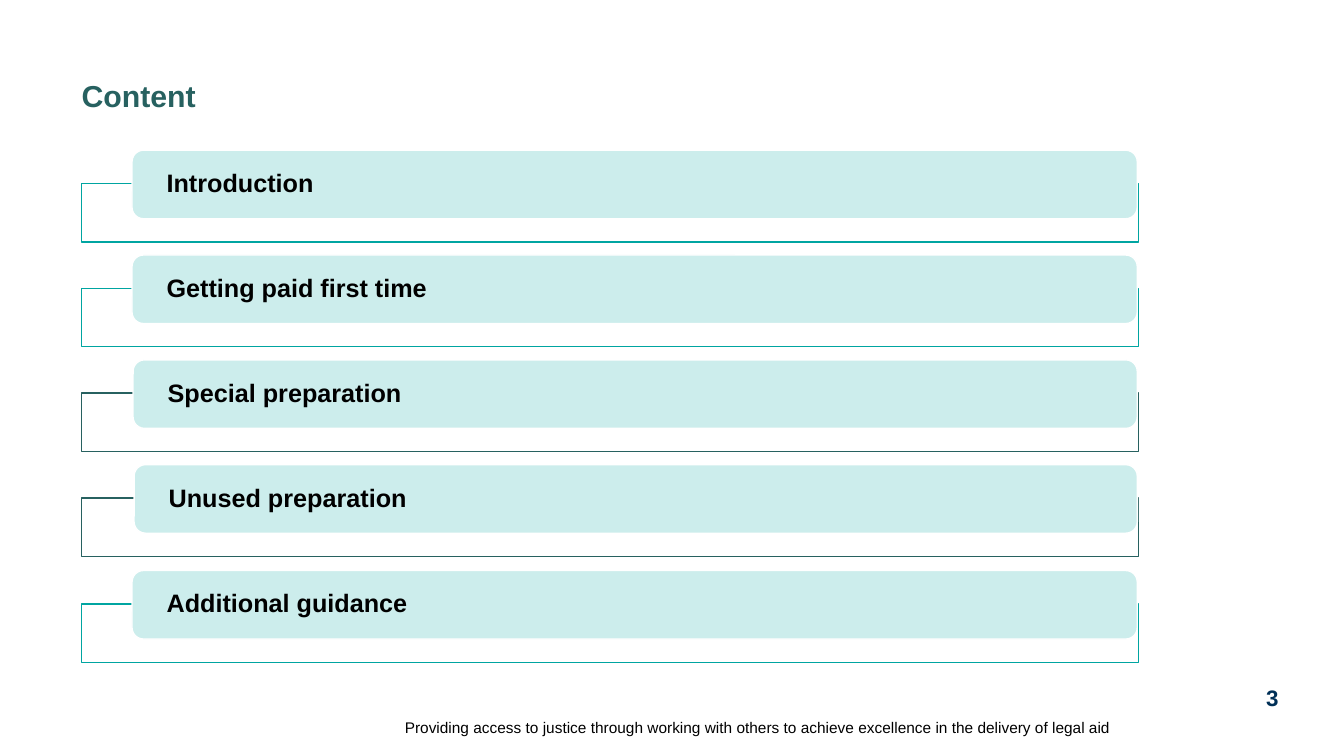
from lxml.etree import SubElement
from pptx import Presentation
from pptx.dml.color import RGBColor
from pptx.enum.shapes import MSO_SHAPE
from pptx.enum.text import MSO_ANCHOR, PP_ALIGN
from pptx.oxml.ns import qn
from pptx.util import Pt

PX = 9144
TEAL = RGBColor(0x00, 0xA5, 0xA1)
PINE = RGBColor(0x27, 0x61, 0x60)
MINT = RGBColor(0xCC, 0xED, 0xEC)
NAVY = RGBColor(0x00, 0x30, 0x57)
WHITE = RGBColor(0xFF, 0xFF, 0xFF)
BLACK = RGBColor(0x00, 0x00, 0x00)

TOPICS = [
    ("Introduction", TEAL, 131),
    ("Getting paid first time", TEAL, 131),
    ("Special preparation", PINE, 132),
    ("Unused preparation", PINE, 133),
    ("Additional guidance", TEAL, 131),
]
RIGHT = 1128


def assign(target, values):
    for name, value in values.items():
        setattr(target, name, value)


def write(shape, text, size, color, bold=True, inset=0,
          anchor=MSO_ANCHOR.MIDDLE, **layout):
    frame = shape.text_frame
    assign(frame, {
        "word_wrap": True, "vertical_anchor": anchor,
        "margin_left": inset * PX, "margin_right": inset * PX,
        "margin_top": 0, "margin_bottom": 0,
    })
    para = frame.paragraphs[0]
    assign(para, {"text": text, "alignment": PP_ALIGN.LEFT, **layout})
    assign(para.font, {"name": "Arial", "size": Pt(size), "bold": bold})
    para.font.color.rgb = color


def label(slide, box, text, size, color, **style):
    shape = slide.shapes.add_textbox(*(n * PX for n in box))
    write(shape, text, size, color, **style)


def panel(slide, kind, box, fill, line):
    shape = slide.shapes.add_shape(kind, *(n * PX for n in box))
    shape.shadow.inherit = False
    shape.fill.solid()
    shape.fill.fore_color.rgb = fill
    shape.line.color.rgb = line
    shape.line.width = Pt(1)
    return shape


def fade(shape, percent):
    color = shape.fill._xPr.find(qn("a:solidFill"))[0]
    SubElement(color, qn("a:alpha")).set("val", str(percent * 1000))


def topic(slide, top, text, line, left):
    frame = panel(slide, MSO_SHAPE.RECTANGLE, (81, top, 1048, 58), WHITE, line)
    fade(frame, 90)
    pill = panel(slide, MSO_SHAPE.ROUNDED_RECTANGLE,
                 (left, top - 33, RIGHT - left, 68), MINT, WHITE)
    write(pill, text, 18, BLACK, inset=31, line_spacing=0.9)


def main():
    deck = Presentation()
    assign(deck, {"slide_width": 1333 * PX, "slide_height": 750 * PX})
    slide = deck.slides.add_slide(deck.slide_layouts[6])
    label(slide, (81, 76, 844, 38), "Content", 21.6, PINE)
    label(slide, (1247, 679, 30, 28), "3", 16, NAVY,
          anchor=MSO_ANCHOR.TOP, alignment=PP_ALIGN.CENTER)
    label(slide, (314, 712, 788, 20),
          "Providing access to justice through working with others "
          "to achieve excellence in the delivery of legal aid",
          11, BLACK, bold=False, alignment=PP_ALIGN.RIGHT)
    for row, (text, line, left) in enumerate(TOPICS):
        topic(slide, 182 + row * 417 // 4, text, line, left)
    deck.save("out.pptx")


if __name__ == "__main__":
    main()
